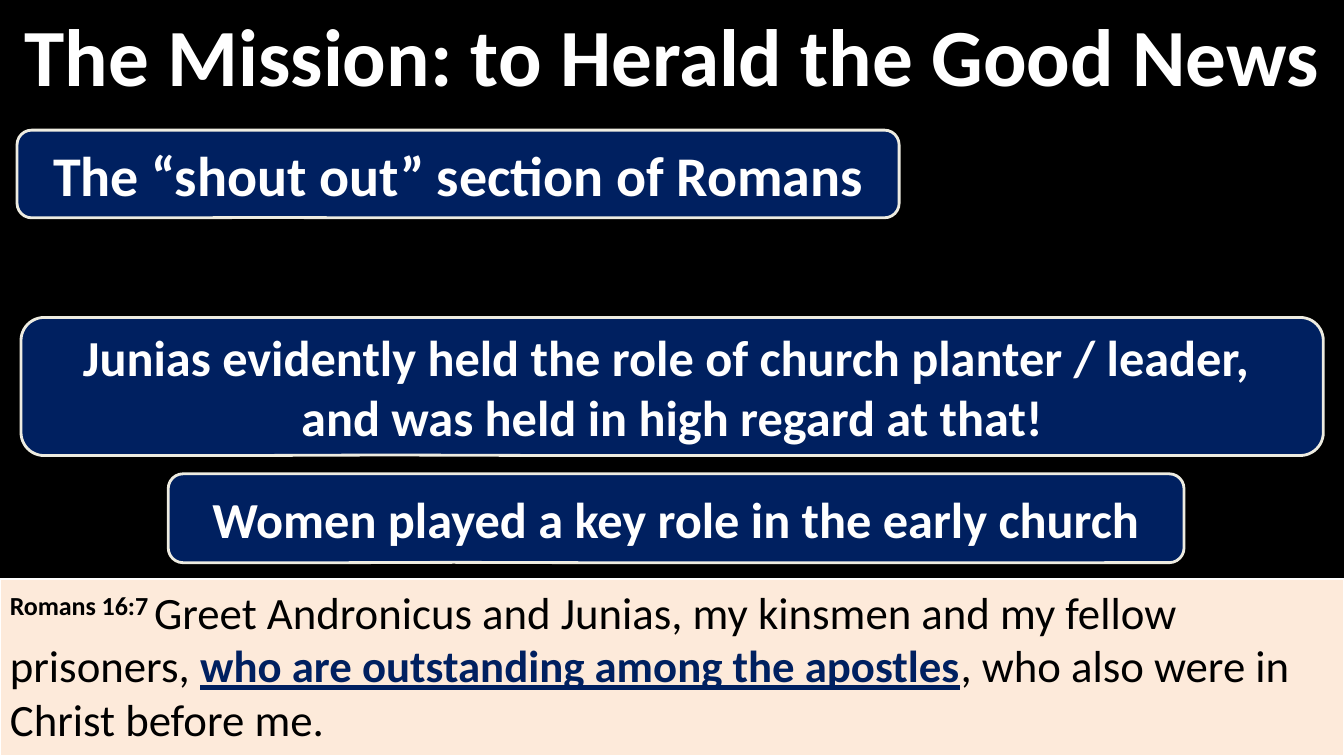
from pptx import Presentation
from pptx.dml.color import RGBColor
from pptx.enum.shapes import MSO_SHAPE
from pptx.enum.text import MSO_ANCHOR, PP_ALIGN
from pptx.util import Cm, Pt

RECTANGLE = MSO_SHAPE.RECTANGLE
CALLOUT = MSO_SHAPE.ROUNDED_RECTANGULAR_CALLOUT
TOP, MIDDLE = MSO_ANCHOR.TOP, MSO_ANCHOR.MIDDLE
LEFT, CENTER = PP_ALIGN.LEFT, PP_ALIGN.CENTER

BLACK = RGBColor(0x00, 0x00, 0x00)
WHITE = RGBColor(0xFF, 0xFF, 0xFF)
NAVY = RGBColor(0x00, 0x20, 0x60)
CREAM = RGBColor(0xEE, 0xEC, 0xE1)
PEACH = RGBColor(0xFD, 0xEA, 0xDA)

FONT = "Calibri"
SLIDE_WIDTH, SLIDE_HEIGHT = 33.87, 19.05
CALLOUT_TAIL = (-0.219, 0.496, 0.167)

# Left, top, width, height in cm, text size, lines
CALLOUTS = [
    (0.53, 8.0, 32.82, 3.48, 36,
     ["Junias evidently held the role of church planter / leader, ",
      "and was held in high regard at that!"]),
    (4.24, 11.94, 25.6, 2.24, 36,
     ["Women played a key role in the early church"]),
    (0.43, 3.28, 22.23, 2.21, 40,
     ["The “shout out” section of Romans"]),
]


def add_run(paragraph, text, size, color, bold=True, underline=False):
    run = paragraph.add_run()
    run.text = text
    font = run.font
    font.name, font.size, font.bold = FONT, Pt(size), bold
    font.underline = underline
    font.color.rgb = color
    return run


def prepare_text(shape, anchor):
    frame = shape.text_frame
    frame.word_wrap = True
    frame.vertical_anchor = anchor
    return frame


def add_lines(frame, lines, size):
    for index, line in enumerate(lines):
        paragraph = frame.add_paragraph() if index else frame.paragraphs[0]
        paragraph.alignment = CENTER
        add_run(paragraph, line, size, WHITE)


def add_panel(slide, kind, box, fill, line, line_width):
    shape = slide.shapes.add_shape(kind, *(Cm(length) for length in box))
    shape.shadow.inherit = False
    shape.fill.solid()
    shape.fill.fore_color.rgb = fill
    shape.line.color.rgb = line
    shape.line.width = Pt(line_width)
    return shape


def add_title(slide, text):
    title = slide.shapes.add_textbox(0, 0, Cm(SLIDE_WIDTH), Cm(2.74))
    add_lines(prepare_text(title, MIDDLE), [text], 58)


def add_verse(slide):
    box = (0, 14.6, SLIDE_WIDTH, SLIDE_HEIGHT - 14.6)
    panel = add_panel(slide, RECTANGLE, box, PEACH, WHITE, 1.5)
    paragraph = prepare_text(panel, TOP).paragraphs[0]
    paragraph.alignment = LEFT
    reference = add_run(paragraph, "Romans 16:7 ", 32, BLACK)
    reference.font._element.set("baseline", "30000")  # superscript
    add_run(paragraph, "Greet Andronicus and Junias, my kinsmen and my fellow prisoners, ",
            32, BLACK, bold=False)
    add_run(paragraph, "who are outstanding among the apostles", 32, NAVY, underline=True)
    add_run(paragraph, ", who also were in Christ before me.", 32, BLACK, bold=False)


def add_callout(slide, left, top, width, height, size, lines):
    callout = add_panel(slide, CALLOUT, (left, top, width, height), NAVY, CREAM, 2)
    for index, value in enumerate(CALLOUT_TAIL):
        callout.adjustments[index] = value
    add_lines(prepare_text(callout, MIDDLE), lines, size)


def main():
    presentation = Presentation()
    presentation.slide_width = Cm(SLIDE_WIDTH)
    presentation.slide_height = Cm(SLIDE_HEIGHT)
    slide = presentation.slides.add_slide(presentation.slide_layouts[6])
    slide.background.fill.solid()
    slide.background.fill.fore_color.rgb = BLACK

    # Heading, scripture band and remarks
    add_title(slide, "The Mission: to Herald the Good News")
    add_verse(slide)
    for callout in CALLOUTS:
        add_callout(slide, *callout)

    presentation.save("out.pptx")


if __name__ == "__main__":
    main()
